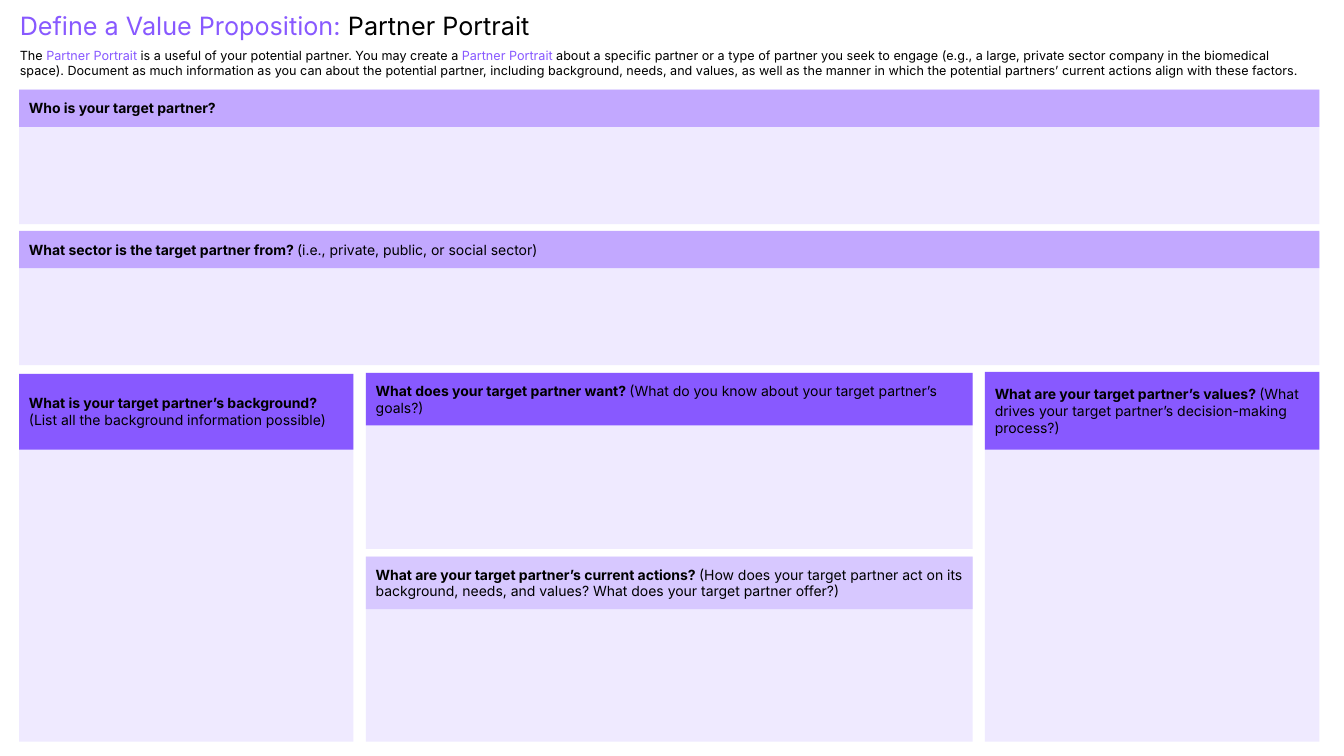
from pptx import Presentation
from pptx.dml.color import RGBColor
from pptx.enum.shapes import MSO_SHAPE
from pptx.enum.text import MSO_ANCHOR, MSO_AUTO_SIZE, PP_ALIGN
from pptx.util import Cm, Pt

COLORS = {
    "black": "000000",
    "violet": "8859FF",
    "lilac": "C2A8FF",
    "lavender": "D7C8FF",
    "pale": "EFEAFF",
}


def add_box(left, top, width, height, color):
    sp = s.shapes.add_shape(MSO_SHAPE.RECTANGLE, Cm(left), Cm(top), Cm(width), Cm(height))
    sp.shadow.inherit = False
    sp.fill.solid()
    sp.fill.fore_color.rgb = RGBColor.from_string(COLORS[color])
    sp.line.fill.background()
    return sp


prs = Presentation()
prs.slide_width, prs.slide_height = Cm(33.87), Cm(19.05)
s = prs.slides.add_slide(prs.slide_layouts[6])

# Title and introduction: top, width, size, runs with colours
intro = [
    (0.13, 33.27, 18, [
        ("Define a Value Proposition: ", "violet"),
        ("Partner Portrait", "black"),
    ]),
    (1.07, 33.02, 9, [
        ("The ", "black"),
        ("Partner Portrait ", "violet"),
        ("is a useful of your potential partner. You may create a ", "black"),
        ("Partner Portrait ", "violet"),
        ("about a specific partner or a type of partner you seek to engage (e.g., a large, "
         "private sector company in the biomedical space). Document as much information as "
         "you can about the potential partner, including background, needs, and values, as "
         "well as the manner in which the potential partners’ current actions align with "
         "these factors.", "black"),
    ]),
]
for top, width, size, runs in intro:
    tf = s.shapes.add_textbox(Cm(0.25), Cm(top), Cm(width), Cm(1.02)).text_frame
    tf.word_wrap = True
    tf.auto_size = MSO_AUTO_SIZE.SHAPE_TO_FIT_TEXT
    p = tf.paragraphs[0]
    p.font.name, p.font.size = "Inter", Pt(size)
    for text, color in runs:
        r = p.add_run()
        r.text = text
        r.font.color.rgb = RGBColor.from_string(COLORS[color])

# Cards: left, top, width, height, header top, header height, header colour, question, hint
LEFT, MIDDLE, RIGHT = 0.48, 9.22, 24.82
FULL, SIDE, CENTER = 32.77, 8.43, 15.29
cards = [
    (LEFT, 2.26, FULL, 3.39, 2.26, 0.94, "lilac",
     "Who is your target partner?", ""),
    (LEFT, 5.85, FULL, 3.35, 5.82, 0.94, "lilac",
     "What sector is the target partner from? ",
     "(i.e., private, public, or social sector)"),
    (LEFT, 9.42, SIDE, 9.27, 9.42, 1.91, "violet",
     "What is your target partner’s background? ",
     "(List all the background information possible)"),
    (MIDDLE, 9.4, CENTER, 4.43, 9.4, 1.32, "violet",
     "What does your target partner want? ",
     "(What do you know about your target partner’s goals?)"),
    (RIGHT, 9.4, SIDE, 9.29, 9.37, 1.96, "violet",
     "What are your target partner’s values? ",
     "(What drives your target partner’s decision-making process?)"),
    (MIDDLE, 14.03, CENTER, 4.66, 14.03, 1.32, "lavender",
     "What are your target partner’s current actions? ",
     "(How does your target partner act on its background, needs, and values? "
     "What does your target partner offer?)"),
]
for left, top, width, height, head_top, head_height, color, question, hint in cards:
    add_box(left, top, width, height, "pale")
    tf = add_box(left, head_top, width, head_height, color).text_frame
    tf.word_wrap = True
    tf.vertical_anchor = MSO_ANCHOR.MIDDLE
    p = tf.paragraphs[0]
    p.alignment = PP_ALIGN.LEFT
    p.font.name, p.font.size = "Inter", Pt(10)
    p.font.color.rgb = RGBColor.from_string(COLORS["black"])
    for text, bold in ((question, True), (hint, False)):
        if text:
            r = p.add_run()
            r.text = text
            r.font.bold = bold

prs.save("out.pptx")
